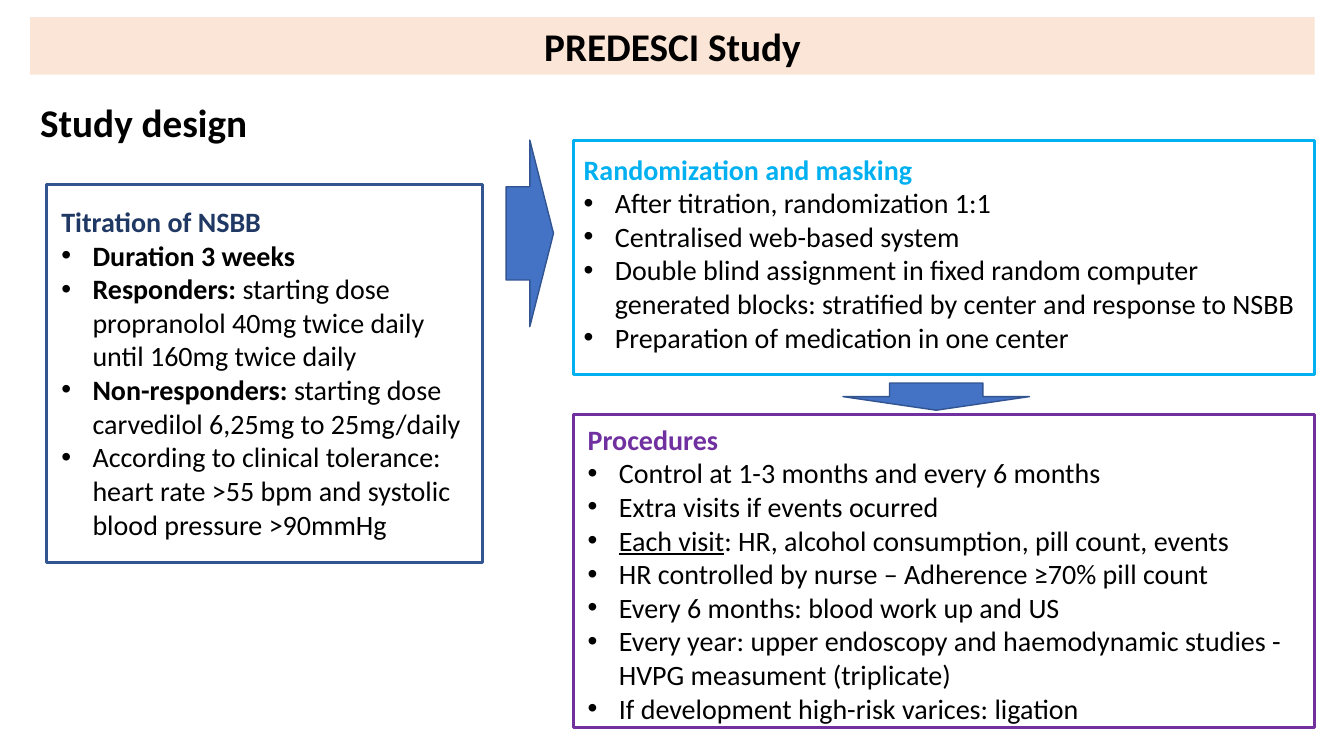
from lxml import etree
from pptx import Presentation
from pptx.dml.color import RGBColor
from pptx.enum.shapes import MSO_SHAPE
from pptx.enum.text import MSO_ANCHOR, MSO_AUTO_SIZE, PP_ALIGN
from pptx.oxml.ns import qn
from pptx.util import Inches, Pt

RECT, ARROW = MSO_SHAPE.RECTANGLE, MSO_SHAPE.RIGHT_ARROW
TOP, GROW = MSO_ANCHOR.TOP, MSO_AUTO_SIZE.SHAPE_TO_FIT_TEXT
LEFT, CENTER = PP_ALIGN.LEFT, PP_ALIGN.CENTER

COLORS = {
    "black": "000000", "peach": "FBE5D6", "blue": "4472C4", "outline": "325491",
    "navy": "203864", "cyan": "00B0F0", "purple": "7030A0",
}


class SlideBuilder:
    font = "Calibri"
    heading_size, body_size = 28, 20
    indent = Inches(0.31)

    def __init__(self, slide):
        self.slide = slide

    def color(self, name):
        return RGBColor.from_string(COLORS[name])

    def shape(self, kind, box, fill=None, line=None, width=1, rotation=0):
        sp = self.slide.shapes.add_shape(kind, *map(Inches, box))
        sp.shadow.inherit = False
        sp.rotation = rotation
        if fill:
            sp.fill.solid()
            sp.fill.fore_color.rgb = self.color(fill)
        else:
            sp.fill.background()
        if line:
            sp.line.color.rgb = self.color(line)
            sp.line.width = Pt(width)
        else:
            sp.line.fill.background()
        return sp

    def arrow(self, box, rotation=0):
        self.shape(ARROW, box, "blue", "outline", rotation=rotation)

    def text_box(self, box):
        return self.slide.shapes.add_textbox(*map(Inches, box))

    def style(self, p, size, color, bold):
        p.font.name = self.font
        p.font.size = Pt(size)
        p.font.color.rgb = self.color(color)
        p.font.bold = bold

    def heading(self, sp, text, size, color="black", align=LEFT):
        tf = sp.text_frame
        tf.word_wrap = True
        tf.auto_size = GROW
        tf.vertical_anchor = TOP
        p = tf.paragraphs[0]
        p.text = text
        p.alignment = align
        self.style(p, size, color, True)
        return tf

    def bullet(self, tf, lead, rest, underline):
        p = tf.add_paragraph()
        self.style(p, self.body_size, "black", False)
        if lead:
            r = p.add_run()
            r.text = lead
            if underline:
                r.font.underline = True
            else:
                r.font.bold = True
        if rest:
            p.add_run().text = rest
        pPr = p._p.get_or_add_pPr()
        pPr.set("marL", str(self.indent))
        pPr.set("indent", str(-self.indent))
        mark_font = etree.Element(qn("a:buFont"), typeface="Arial")
        mark = etree.Element(qn("a:buChar"), char="•")
        pPr.insert(0, mark_font)
        pPr.insert(1, mark)

    def panel(self, frame, text_area, line, title, color, items, underline=False):
        """Outlined box with a coloured title; items are (lead, rest) pairs."""
        self.shape(RECT, frame, line=line, width=2.25)
        tf = self.heading(self.text_box(text_area), title, self.body_size, color)
        for lead, rest in items:
            self.bullet(tf, lead, rest, underline)


def main():
    prs = Presentation()
    prs.slide_width, prs.slide_height = Inches(13.33), Inches(7.5)
    s = SlideBuilder(prs.slides.add_slide(prs.slide_layouts[6]))

    # Title band and heading
    band = s.shape(RECT, (0.3, 0.17, 12.74, 0.57), fill="peach")
    s.heading(band, "PREDESCI Study", s.heading_size, align=CENTER)
    s.heading(s.text_box((0.3, 0.93, 4.33, 0.57)), "Study design", s.heading_size)

    # Titration
    s.panel((0.46, 1.83, 4.33, 3.75), (0.51, 1.98, 4.33, 3.47),
            "outline", "Titration of NSBB", "navy", [
        ("Duration 3 weeks", ""),
        ("Responders: ", "starting dose propranolol 40mg twice daily until 160mg twice daily"),
        ("Non-responders: ", "starting dose carvedilol 6,25mg to 25mg/daily"),
        ("", "According to clinical tolerance: heart rate ˃55 bpm and "
             "systolic blood pressure ˃90mmHg"),
    ])
    s.arrow((5.02, 1.39, 0.47, 1.85))

    # Randomization
    s.panel((5.69, 1.39, 7.35, 2.33), (5.69, 1.46, 7.35, 2.12),
            "cyan", "Randomization and masking", "cyan", [
        ("", "After titration, randomization 1:1"),
        ("", "Centralised web-based system"),
        ("", "Double blind assignment in fixed random computer generated blocks: "
             "stratified by center and response to NSBB"),
        ("", "Preparation of medication in one center"),
    ])

    # Procedures
    s.panel((5.69, 4.11, 7.35, 3.11), (5.73, 4.14, 7.35, 3.1),
            "purple", "Procedures", "purple", [
        ("", "Control at 1-3 months and every 6 months"),
        ("", "Extra visits if events ocurred"),
        ("Each visit", ": HR, alcohol consumption, pill count, events"),
        ("", "HR controlled by nurse – Adherence ≥70% pill count"),
        ("", "Every 6 months: blood work up and US"),
        ("", "Every year: upper endoscopy and haemodynamic studies - "
             "HVPG measument (triplicate)"),
        ("", "If development high-risk varices: ligation"),
    ], underline=True)
    s.arrow((9.15, 3.01, 0.27, 1.85), rotation=90)

    prs.save("out.pptx")


if __name__ == "__main__":
    main()
